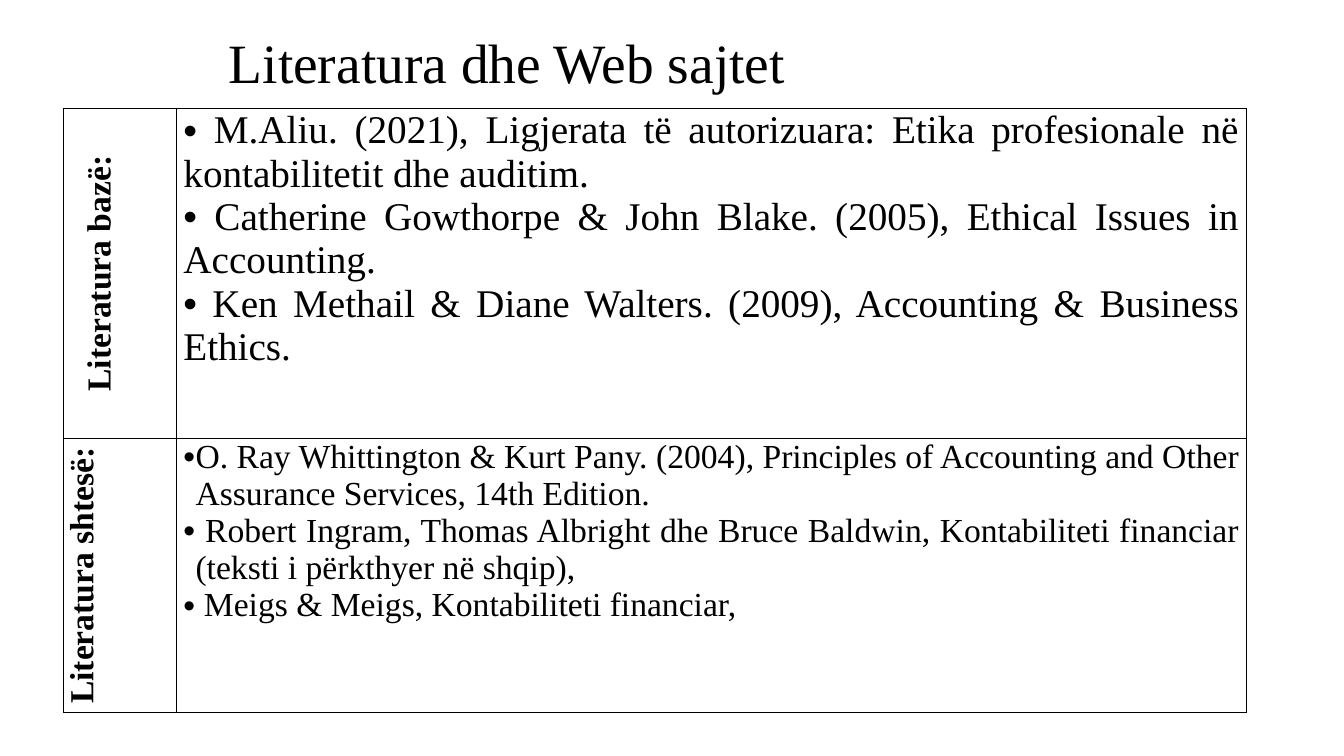
from lxml import etree
from pptx import Presentation
from pptx.dml.color import RGBColor
from pptx.enum.text import MSO_ANCHOR, PP_ALIGN
from pptx.oxml.ns import qn
from pptx.util import Inches, Pt

MIDDLE, TOP = MSO_ANCHOR.MIDDLE, MSO_ANCHOR.TOP
LEFT, CENTER, JUSTIFY = PP_ALIGN.LEFT, PP_ALIGN.CENTER, PP_ALIGN.JUSTIFY
COLORS = {"ink": "000000"}
FONT = "Times New Roman"

TITLE = "Literatura dhe Web sajtet"
SECTIONS = [
    {
        "label": "Literatura bazë:", "height": 3.27, "size": 28, "hang": 0, "top": 0.17,
        "books": [
            " M.Aliu. (2021), Ligjerata të autorizuara: Etika profesionale në kontabilitetit dhe auditim.",
            " Catherine Gowthorpe & John Blake. (2005), Ethical Issues in Accounting.",
            " Ken Methail & Diane Walters. (2009), Accounting & Business Ethics.",
        ],
    },
    {
        "label": "Literatura shtesë:", "height": 2.72, "size": 24, "hang": 0.12, "top": 0,
        "books": [
            "O. Ray Whittington & Kurt Pany. (2004), Principles of Accounting and "
            "Other Assurance Services, 14th Edition.",
            " Robert Ingram, Thomas Albright dhe Bruce Baldwin, Kontabiliteti financiar "
            "(teksti i përkthyer në shqip),",
            " Meigs & Meigs, Kontabiliteti financiar,",
        ],
    },
]
COLUMNS = [1.12, 10.61]


def add_text(para, text, size, align, bold=False):
    para.alignment = align
    span = para.add_run()
    span.text = text
    span.font.name = FONT
    span.font.size = Pt(size)
    span.font.bold = bold
    span.font.color.rgb = RGBColor.from_string(COLORS["ink"])


def add_bullet(para, hang):
    props = para._p.get_or_add_pPr()
    props.set("marL", str(Inches(hang)))
    props.set("indent", str(-Inches(hang)))
    etree.SubElement(props, qn("a:buFont"), typeface="Arial")
    etree.SubElement(props, qn("a:buChar"), char="•")


def format_cell(cell, anchor, top=0):
    cell.margin_left = cell.margin_right = Inches(0.07)
    cell.margin_top, cell.margin_bottom = Inches(top), 0
    cell.vertical_anchor = anchor
    props = cell._tc.get_or_add_tcPr()
    for side in ("lnL", "lnR", "lnT", "lnB"):
        line = etree.SubElement(props, qn("a:" + side), w=str(Pt(1)))
        fill = etree.SubElement(line, qn("a:solidFill"))
        etree.SubElement(fill, qn("a:srgbClr"), val=COLORS["ink"])
    cell.fill.background()


def add_title(page):
    title = page.shapes.title
    title.left, title.top = Inches(2.17), Inches(0.3)
    title.width, title.height = Inches(9), Inches(0.7)
    title.text_frame.vertical_anchor = MIDDLE
    para = title.text_frame.paragraphs[0]
    para.line_spacing = 0.9
    add_text(para, TITLE, 39.6, LEFT)


def add_literature(page):
    height = sum(section["height"] for section in SECTIONS)
    table = page.shapes.add_table(
        len(SECTIONS), len(COLUMNS), Inches(0.63), Inches(1.08),
        Inches(sum(COLUMNS)), Inches(height)).table
    table.first_row = table.horz_banding = False
    for column, width in zip(table.columns, COLUMNS):
        column.width = Inches(width)
    for row, section in zip(table.rows, SECTIONS):
        row.height = Inches(section["height"])
        label, books = row.cells
        format_cell(label, MIDDLE, section["top"])
        label._tc.get_or_add_tcPr().set("vert", "vert270")
        add_text(label.text_frame.paragraphs[0], section["label"], 24, CENTER, True)
        format_cell(books, TOP)
        frame = books.text_frame
        for index, book in enumerate(section["books"]):
            para = frame.add_paragraph() if index else frame.paragraphs[0]
            add_bullet(para, section["hang"])
            add_text(para, book, section["size"], JUSTIFY)


def main():
    deck = Presentation()
    deck.slide_width, deck.slide_height = Inches(13.33), Inches(7.5)
    page = deck.slides.add_slide(deck.slide_layouts[5])
    add_title(page)
    add_literature(page)
    deck.save("out.pptx")


if __name__ == "__main__":
    main()
